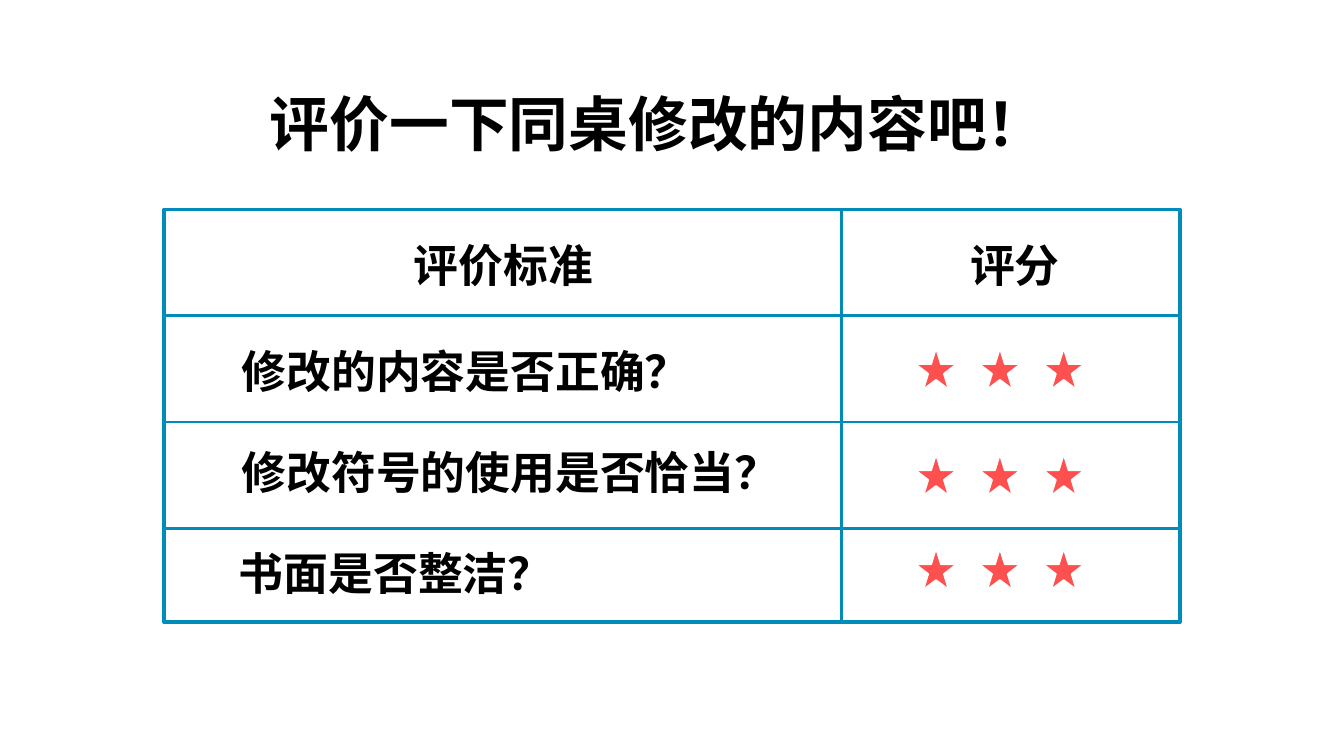
from typing import NamedTuple

from lxml.etree import SubElement
from pptx import Presentation
from pptx.dml.color import RGBColor
from pptx.enum.shapes import MSO_CONNECTOR as Link, MSO_SHAPE as Kind
from pptx.oxml.ns import qn
from pptx.util import Inches, Pt

BLACK = RGBColor(0x00, 0x00, 0x00)
WHITE = RGBColor(0xFF, 0xFF, 0xFF)
BLUE = RGBColor(0x00, 0x8B, 0xBB)
RED = RGBColor(0xFF, 0x50, 0x50)
FONT = "Noto Sans CJK SC"

WIDE = 10
HIGH = WIDE * 9 / 16
LEFT, TOP, WIDTH, HEIGHT = 1.22, 1.56, 7.56, 3.07
SPLIT = 6.26
RULE, RULE_GAP = 2.35, 0.79
STAR, STAR_LEFT, STAR_GAP = 0.31, 6.81, 0.475


class Label(NamedTuple):
    text: str
    left: float
    top: float
    width: float
    height: float = 0.5
    size: int = 24
    wrap: bool = False


TITLE = Label("评价一下同桌修改的内容吧！", 1.91, 0.6, 7.18, 0.64, 32, True)
HEADS = [
    Label("评价标准", 2.98, 1.72, 1.55),
    Label("评分", 7.12, 1.72, 0.88),
]
ITEMS = [
    Label("修改的内容是否正确？", 1.7, 2.51, 3.57),
    Label("修改符号的使用是否恰当？", 1.7, 3.26, 4.24),
    Label("书面是否整洁？", 1.68, 4.01, 2.56),
]
STAR_TOPS = [2.59, 3.38, 4.08]


def add_label(slide, label: Label) -> None:
    box = slide.shapes.add_textbox(
        Inches(label.left), Inches(label.top),
        Inches(label.width), Inches(label.height))
    box.text_frame.word_wrap = label.wrap
    run = box.text_frame.paragraphs[0].add_run()
    run.text = label.text
    for name, value in {"name": FONT, "size": Pt(label.size),
                        "bold": True}.items():
        setattr(run.font, name, value)
    run.font.color.rgb = BLACK
    east = SubElement(run.font._element, qn("a:ea"))
    east.set("typeface", FONT)


def add_rule(slide, left: float, top: float, right: float, base: float) -> None:
    rule = slide.shapes.add_connector(
        Link.STRAIGHT, Inches(left), Inches(top), Inches(right), Inches(base))
    rule.line.color.rgb = BLUE
    rule.line.width = Pt(1.5)
    SubElement(rule._element.spPr, qn("a:effectLst"))


def add_frame(slide) -> None:
    frame = slide.shapes.add_shape(
        Kind.RECTANGLE, Inches(LEFT), Inches(TOP), Inches(WIDTH), Inches(HEIGHT))
    frame.shadow.inherit = False
    frame.fill.background()
    frame.line.color.rgb = BLUE
    frame.line.width = Pt(2)


def add_star(slide, left: float, top: float) -> None:
    star = slide.shapes.add_shape(
        Kind.STAR_5_POINT, Inches(left), Inches(top), Inches(STAR), Inches(STAR))
    star.shadow.inherit = False
    star.fill.solid()
    star.fill.fore_color.rgb = RED
    star.line.color.rgb = WHITE
    star.line.width = Pt(1)


def main() -> None:
    deck = Presentation()
    deck.slide_width, deck.slide_height = Inches(WIDE), Inches(HIGH)
    slide = deck.slides.add_slide(deck.slide_layouts[6])

    add_label(slide, TITLE)
    for row in range(3):
        level = RULE + row * RULE_GAP
        add_rule(slide, LEFT, level, LEFT + WIDTH, level)
    add_rule(slide, SPLIT, TOP, SPLIT, TOP + HEIGHT)
    add_frame(slide)
    for label in HEADS + ITEMS:
        add_label(slide, label)
    for top in STAR_TOPS:
        for col in range(3):
            add_star(slide, STAR_LEFT + col * STAR_GAP, top)

    deck.save("out.pptx")


if __name__ == "__main__":
    main()
